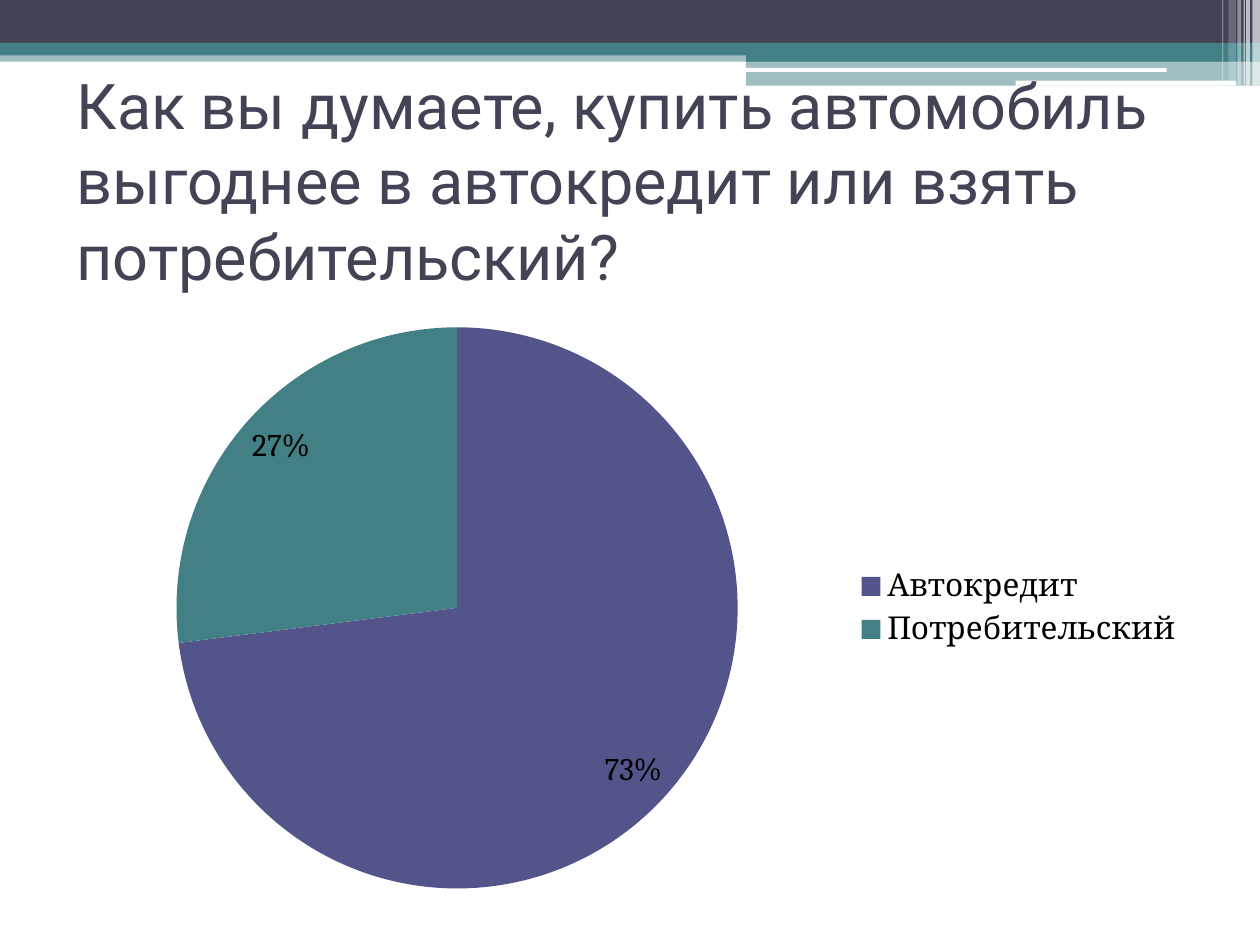
from lxml.etree import SubElement as Sub
from pptx import Presentation
from pptx.chart.data import CategoryChartData as Data
from pptx.dml.color import RGBColor as Rgb
from pptx.enum.chart import XL_CHART_TYPE as Kind, XL_LABEL_POSITION as Spot
from pptx.enum.chart import XL_LEGEND_POSITION as Side
from pptx.enum.shapes import MSO_SHAPE as Form
from pptx.enum.text import MSO_ANCHOR as Anchor
from pptx.oxml.ns import qn
from pptx.util import Inches, Pt

COLS = 100
TITLE = "Как вы думаете, купить автомобиль выгоднее в автокредит или взять потребительский?"
VOTES = {"Автокредит": 73, "Потребительский": 27}
INK = {"dark": "424456", "teal": "438086", "white": "FFFFFF",
       "plum": "53548A", "black": "000000"}
SLICES = ["plum", "teal"]

BANDS = [
    (0, 4, 100, 0.9, "teal", 50),
    (0, 0, 100, 3.4, "dark", 100),
    (0, 3.4, 100, 1, "teal", 100),
    (59.2, 3.9, 40.8, 1, "teal", 100),
    (59.2, 4.8, 40.8, 2, "teal", 50),
]
LINES = [(59.1, 5.4, 33.5, 0.3), (80.6, 6.4, 17.5, 0.4)]
STRIPES = [
    (99.4, 0.6, 6.8, 65),
    (98.9, 0.3, 6.8, 65),
    (98.7, 0.1, 6.8, 60),
    (98.2, 0.3, 6.8, 40),
    (97.5, 0.6, 6.4, 20),
    (97, 0.1, 6.4, 30),
]

deck = Presentation()
deck.slide_width, deck.slide_height = Inches(10), Inches(7.5)
slide = deck.slides.add_slide(deck.slide_layouts[6])
unit = deck.slide_width / COLS


def place(*cells):
    return [round(cell * unit) for cell in cells]


def tint(fill, name):
    fill.solid()
    fill.fore_color.rgb = Rgb.from_string(INK[name])


def style(font, name, size, ink):
    font.name, font.size = name, Pt(size)
    font.color.rgb = Rgb.from_string(INK[ink])


def bar(x, y, w, h, ink, alpha=100, form=Form.RECTANGLE):
    shape = slide.shapes.add_shape(form, *place(x, y, w, h))
    shape.shadow.inherit = False
    shape.line.fill.background()
    tint(shape.fill, ink)
    if alpha < 100:
        color = shape.fill._xPr.find(".//" + qn("a:srgbClr"))
        Sub(color, qn("a:alpha"), val=str(alpha * 1000))


for band in BANDS:
    bar(*band)
for line in LINES:
    bar(*line, "white", form=Form.ROUNDED_RECTANGLE)
for x, w, h, alpha in STRIPES:
    bar(x, 0, w, h, "white", alpha)

frame = slide.shapes.add_textbox(*place(5.1, 8.4, 90, 11.7)).text_frame
frame.word_wrap = True
frame.vertical_anchor = Anchor.MIDDLE
head = frame.paragraphs[0]
head.text = TITLE
style(head.font, "Roboto", 36, "dark")

data = Data()
data.categories = list(VOTES)
data.add_series("Series 1", VOTES.values())
chart = slide.shapes.add_chart(Kind.PIE, *place(5, 24.6, 90, 47.3), data).chart
style(chart.font, "Cambria", 18, "black")
chart.has_title = False
chart.has_legend = True
chart.legend.position = Side.RIGHT
chart.legend.include_in_layout = False

plot = chart.plots[0]
plot.vary_by_categories = True
for index, ink in enumerate(SLICES):
    tint(plot.series[0].points[index].format.fill, ink)
plot.has_data_labels = True
labels = plot.data_labels
labels.show_value = False
labels.show_percentage = True
labels.number_format = "0%"
labels.number_format_is_linked = False
labels.position = Spot.INSIDE_END

deck.save("out.pptx")
